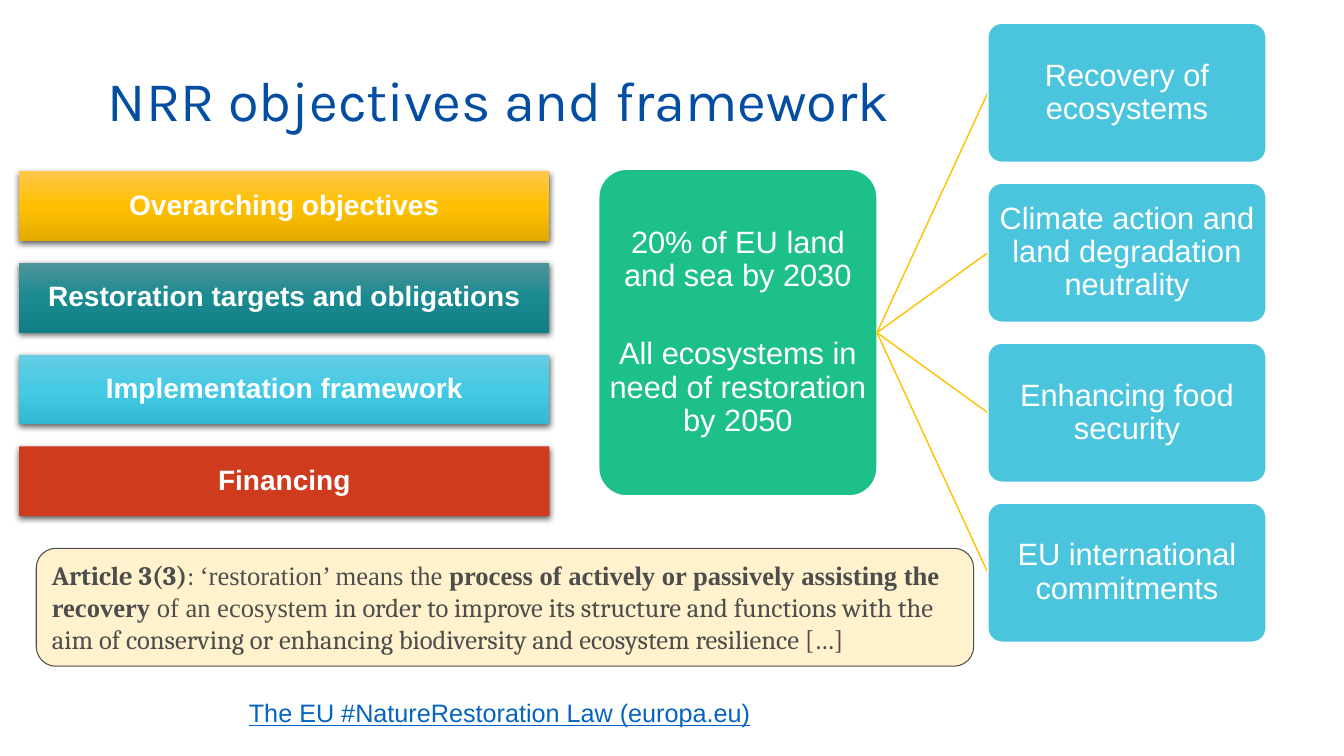
from lxml import etree
from pptx import Presentation
from pptx.dml.color import RGBColor
from pptx.enum.shapes import MSO_CONNECTOR, MSO_SHAPE
from pptx.enum.text import MSO_ANCHOR, MSO_AUTO_SIZE, PP_ALIGN
from pptx.oxml import parse_xml
from pptx.oxml.ns import nsdecls, qn
from pptx.util import Inches, Pt

RECT, ROUND = MSO_SHAPE.RECTANGLE, MSO_SHAPE.ROUNDED_RECTANGLE
STRAIGHT = MSO_CONNECTOR.STRAIGHT
MIDDLE, BOTTOM, TOP = MSO_ANCHOR.MIDDLE, MSO_ANCHOR.BOTTOM, MSO_ANCHOR.TOP
LEFT, CENTER = PP_ALIGN.LEFT, PP_ALIGN.CENTER
FIXED = MSO_AUTO_SIZE.NONE

COLORS = {
    "white": "FFFFFF", "black": "000000", "title": "034EA2", "link": "0563C1",
    "ink": "4D4D4D", "cream": "FFF2CC", "green": "1EC08A", "sky": "4BC5DE",
    "gold": "FFC000", "red": "CF3B1D",
}
GOLD = ("FFC64B", "FFC000", "E3AB00")
TEAL = ("4E9499", "198A90", "117F85")
CYAN = ("66CCE3", "44CAE5", "34B9D4")


class Deck:
    def __init__(self, width, height):
        self.prs = Presentation()
        self.prs.slide_width = Inches(width)
        self.prs.slide_height = Inches(height)
        self.col = self.prs.slide_width / 100
        self.row = self.prs.slide_height / 100
        self.slide = self.prs.slides.add_slide(self.prs.slide_layouts[5])

    def place(self, x, y, w, h):
        return (round(x * self.col), round(y * self.row),
                round(w * self.col), round(h * self.row))

    def color(self, name):
        return RGBColor.from_string(COLORS[name])

    def frame(self, shape, anchor, insets):
        frame = shape.text_frame
        frame.word_wrap = True
        frame.auto_size = FIXED
        frame.vertical_anchor = anchor
        (frame.margin_left, frame.margin_top,
         frame.margin_right, frame.margin_bottom) = map(Inches, insets)
        return frame

    def words(self, para, runs, size, color, align=LEFT, space=1.0):
        para.alignment = align
        para.line_spacing = space
        for text, face, bold in runs:
            run = para.add_run()
            run.text = text
            font = run.font
            font.name, font.bold, font.size = face, bold, Pt(size)
            font.color.rgb = self.color(color)

    def title(self, text, box):
        shape = self.slide.shapes.title
        shape.left, shape.top, shape.width, shape.height = self.place(*box)
        frame = self.frame(shape, BOTTOM, (0.1, 0.05, 0.1, 0))
        self.words(frame.paragraphs[0], [(text, "Karla", False)], 40, "title", space=0.9)

    def block(self, kind, box, fill, line=None, width=1.0, corner=None):
        shape = self.slide.shapes.add_shape(kind, *self.place(*box))
        shape.shadow.inherit = False
        shape.fill.solid()
        shape.fill.fore_color.rgb = self.color(fill)
        if line:
            shape.line.color.rgb = self.color(line)
            shape.line.width = Pt(width)
        else:
            shape.line.fill.background()
        if corner:
            shape.adjustments[0] = corner
        return shape

    def shade(self, shape, stops):
        props = shape._element.spPr
        marks = "".join(
            f'<a:gs pos="{i * 50000}"><a:srgbClr val="{tone}"/></a:gs>'
            for i, tone in enumerate(stops))
        grad = parse_xml(f'<a:gradFill {nsdecls("a")}><a:gsLst>{marks}</a:gsLst>'
                         '<a:lin ang="5400000" scaled="0"/></a:gradFill>')
        props.replace(props.find(qn("a:solidFill")), grad)

    def shadow(self, shape):
        effects = shape._element.spPr.find(qn("a:effectLst"))
        effects.append(parse_xml(
            f'<a:outerShdw {nsdecls("a")} blurRad="{Pt(4.5)}" dist="{Pt(1.5)}" '
            f'dir="5400000" rotWithShape="0"><a:srgbClr val="{COLORS["black"]}">'
            '<a:alpha val="63000"/></a:srgbClr></a:outerShdw>'))

    def bar(self, text, box, fill, stops):
        shape = self.block(RECT, box, fill)
        if stops:
            self.shade(shape, stops)
        self.shadow(shape)
        frame = self.frame(shape, MIDDLE, (0.11, 0.06, 0.11, 0.06))
        self.words(frame.paragraphs[0], [(text, "Arial", True)], 20, "white", CENTER, 0.9)

    def card(self, texts, box, fill):
        shape = self.block(ROUND, box, fill, "white", corner=0.1)
        frame = self.frame(shape, MIDDLE, (0.02,) * 4)
        for i, text in enumerate(texts):
            para = frame.add_paragraph() if i else frame.paragraphs[0]
            self.words(para, [(text, "Arial", False)], 22, "white", CENTER, 0.9)
            if i:
                para.space_before = Pt(32)

    def note(self, runs, box):
        shape = self.block(ROUND, box, "cream", "ink", 0.75)
        frame = self.frame(shape, MIDDLE, (0.1, 0.05, 0.1, 0.05))
        self.words(frame.paragraphs[0], runs, 19, "ink")

    def link(self, text, box):
        shape = self.slide.shapes.add_textbox(*self.place(*box))
        frame = self.frame(shape, TOP, (0.1, 0.05, 0.1, 0.05))
        para = frame.paragraphs[0]
        self.words(para, [(text, "Arial", False)], 18, "link")
        para.runs[0].font.underline = True

    def ray(self, x, y, end, stop):
        line = self.slide.shapes.add_connector(STRAIGHT, *self.place(x, y, end, stop))
        line.line.color.rgb = self.color("gold")
        line.line.width = Pt(1)
        etree.SubElement(line._element.spPr, qn("a:effectLst"))


def main():
    deck = Deck(13.33, 7.5)
    deck.title("NRR objectives and framework", (7.28, 6.27, 86.25, 11.47))

    bars = [
        ("Overarching objectives", "gold", GOLD),
        ("Restoration targets and obligations", "green", TEAL),
        ("Implementation framework", "sky", CYAN),
        ("Financing", "red", None),
    ]
    for i, (text, fill, stops) in enumerate(bars):
        deck.bar(text, (1.43, 22.67 + i * 12.13, 39.45, 9.2), fill, stops)

    deck.link("The EU #NatureRestoration Law (europa.eu)", (17.78, 91.6, 51.6, 5.33))
    deck.note([
        ("Article 3(3)", "Cambria", True),
        (": ", "Cambria", False),
        ("‘restoration’ means the ", "Times New Roman", False),
        ("process of actively or passively assisting the recovery", "Times New Roman", True),
        (" of an ecosystem ", "Times New Roman", False),
        ("in order to improve its structure and functions with the aim of conserving "
         "or enhancing biodiversity and ecosystem resilience […]", "Cambria", False),
    ], (2.7, 72.53, 69.75, 15.6))

    x, y, wide, tall = 44.55, 22.4, 20.7, 43.2
    deck.card(["20% of EU land and sea by 2030",
               "All ecosystems in need of restoration by 2050"],
              (x, y, wide, tall), "green")

    aims = ["Recovery of ecosystems",
            "Climate action and land degradation neutrality",
            "Enhancing food security",
            "EU international commitments"]
    left, top, high, step = 73.5, 3.07, 18.4, 21.16
    for i, aim in enumerate(aims):
        spot = top + i * step
        deck.ray(x + wide, y + tall / 2, left, spot + high / 2)
        deck.card([aim], (left, spot, wide, high), "sky")

    deck.prs.save("out.pptx")


if __name__ == "__main__":
    main()
